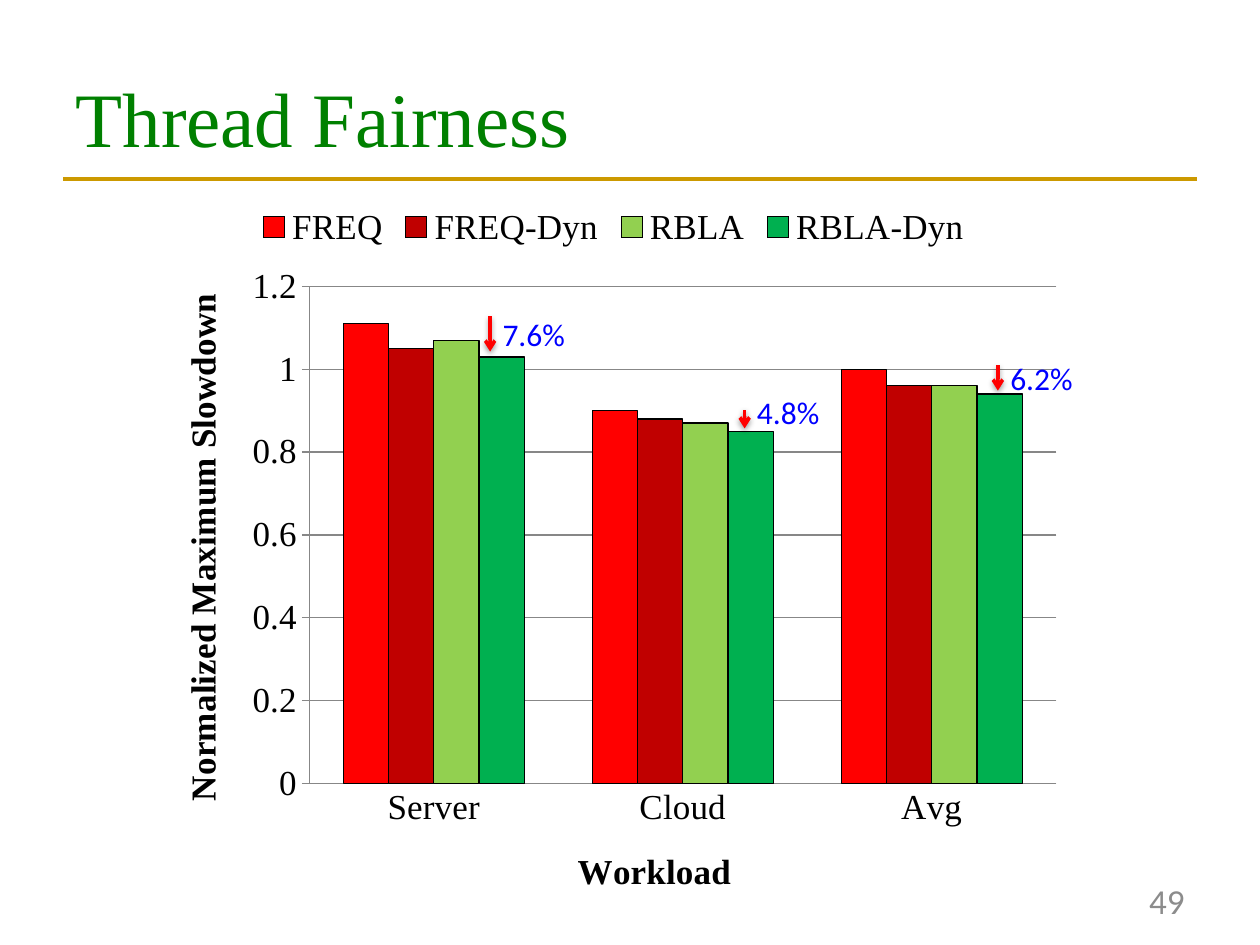
import pptx
import pptx.chart.data
import pptx.dml.color
import pptx.enum.chart
import pptx.enum.shapes
import pptx.enum.text
import pptx.oxml
import pptx.oxml.ns
import pptx.util
from pptx.util import Inches

COLORS = {
    "title": "008000", "rule": "CC9900", "number": "8C8C8C", "axis": "878787",
    "arrow": "FF0000", "note": "0000FF", "black": "000000",
    "FREQ": "FF0000", "FREQ-Dyn": "C00000", "RBLA": "92D050", "RBLA-Dyn": "00B050",
}
NS = pptx.oxml.ns.nsdecls("a", "c")
ALIGN = pptx.enum.text.PP_ALIGN
ANCHOR = pptx.enum.text.MSO_ANCHOR


def rgb(name):
    return pptx.dml.color.RGBColor.from_string(COLORS[name])


def write(tf, text, size=18, font="Calibri", color="black", bold=False,
          align=ALIGN.LEFT, anchor=ANCHOR.TOP, wrap=True):
    """Put one formatted run into a text frame."""
    tf.word_wrap = wrap
    tf.vertical_anchor = anchor
    p = tf.paragraphs[0]
    p.alignment = align
    r = p.add_run()
    r.text = text
    r.font.size = pptx.util.Pt(size)
    r.font.name = font
    r.font.bold = bold
    r.font.color.rgb = rgb(color)


prs = pptx.Presentation()
prs.slide_width, prs.slide_height = Inches(10), Inches(7.5)
s = prs.slides.add_slide(prs.slide_layouts[5])

# Title and the rule below it
title = s.shapes.title
title.left, title.top = Inches(0.5), Inches(0.3)
title.width, title.height = Inches(9), Inches(1.25)
write(title.text_frame, "Thread Fairness", size=44, font="Times New Roman",
      color="title", anchor=ANCHOR.MIDDLE)

STRAIGHT = pptx.enum.shapes.MSO_CONNECTOR.STRAIGHT
rule = s.shapes.add_connector(STRAIGHT, Inches(0.5), Inches(1.42), Inches(9.5), Inches(1.42))
rule.line.color.rgb = rgb("rule")
rule.line.width = pptx.util.Pt(2.25)
rule._element.spPr.append(pptx.oxml.parse_xml(f"<a:effectLst {NS}/>"))

# Slowdown chart
data = pptx.chart.data.CategoryChartData()
data.categories = ["Server", "Cloud", "Avg"]
data.add_series("FREQ", (1.11, 0.9, 1))
data.add_series("FREQ-Dyn", (1.05, 0.88, 0.96))
data.add_series("RBLA", (1.07, 0.87, 0.96))
data.add_series("RBLA-Dyn", (1.03, 0.85, 0.94))
chart = s.shapes.add_chart(
    pptx.enum.chart.XL_CHART_TYPE.COLUMN_CLUSTERED,
    Inches(1.21), Inches(1.52), Inches(7.32), Inches(5.8), data).chart
chart.has_title = False
chart.font.name = "Times New Roman"
chart.font.size = pptx.util.Pt(20)
chart.font.color.rgb = rgb("black")
chart.has_legend = True
chart.legend.position = pptx.enum.chart.XL_LEGEND_POSITION.TOP
chart.legend.include_in_layout = False

plot = chart.plots[0]
plot.gap_width = 150
plot.overlap = 0
plot.vary_by_categories = False
for series in plot.series:
    series.format.fill.solid()
    series.format.fill.fore_color.rgb = rgb(series.name)
    series.format.line.color.rgb = rgb("black")
    series.format.line.width = pptx.util.Pt(0.75)

TICK = pptx.enum.chart.XL_TICK_MARK
for axis, text, tick in ((chart.category_axis, "Workload", TICK.NONE),
                         (chart.value_axis, "Normalized Maximum Slowdown", TICK.OUTSIDE)):
    write(axis.axis_title.text_frame, text, size=20, font="Times New Roman",
          bold=True, align=ALIGN.CENTER)
    axis.major_tick_mark = tick
    axis.minor_tick_mark = TICK.NONE
    axis.format.line.color.rgb = rgb("axis")

value_axis = chart.value_axis
value_axis.minimum_scale, value_axis.maximum_scale, value_axis.major_unit = 0, 1.2, 0.2
value_axis.tick_labels.number_format = "General"
value_axis.tick_labels.number_format_is_linked = False
value_axis.major_gridlines.format.line.color.rgb = rgb("axis")
body = value_axis.axis_title._element.xpath(".//a:bodyPr")[0]
body.set("rot", "-5400000")
body.set("vert", "horz")

plot_area = chart._chartSpace.chart.plotArea
for layout in plot_area.xpath("c:layout"):
    plot_area.remove(layout)
plot_area.insert(0, pptx.oxml.parse_xml(
    f'<c:layout {NS}><c:manualLayout><c:layoutTarget val="inner"/>'
    '<c:xMode val="edge"/><c:yMode val="edge"/><c:x val="0.17"/><c:y val="0.13"/>'
    '<c:w val="0.81"/><c:h val="0.68"/></c:manualLayout></c:layout>'))

# Slide number
number = s.shapes.add_textbox(Inches(7.17), Inches(6.95), Inches(2.33), Inches(0.4))
write(number.text_frame, "49", size=20, color="number", align=ALIGN.RIGHT,
      anchor=ANCHOR.MIDDLE)

# Reductions: arrow x, arrow tip, arrow start, label top, label
for x, tip, start, top, label in ((3.89, 2.79, 2.51, 2.45, "7.6%"),
                                  (5.91, 3.4, 3.25, 3.07, "4.8%"),
                                  (7.92, 3.1, 2.9, 2.8, "6.2%")):
    arrow = s.shapes.add_connector(STRAIGHT, Inches(x), Inches(tip), Inches(x), Inches(start))
    arrow.line.color.rgb = rgb("arrow")
    arrow.line.width = pptx.util.Pt(2)
    arrow.line._get_or_add_ln().append(pptx.oxml.parse_xml(f'<a:headEnd {NS} type="arrow"/>'))
    arrow._element.spPr.append(pptx.oxml.parse_xml(
        f'<a:effectLst {NS}><a:outerShdw blurRad="40000" dist="20000" dir="5400000" '
        f'rotWithShape="0"><a:srgbClr val="{COLORS["black"]}"><a:alpha val="38000"/>'
        '</a:srgbClr></a:outerShdw></a:effectLst>'))
    note = s.shapes.add_textbox(Inches(x), Inches(top), Inches(0.77), Inches(0.4))
    write(note.text_frame, label, color="note")
    note.text_frame.auto_size = pptx.enum.text.MSO_AUTO_SIZE.SHAPE_TO_FIT_TEXT

prs.save("out.pptx")
